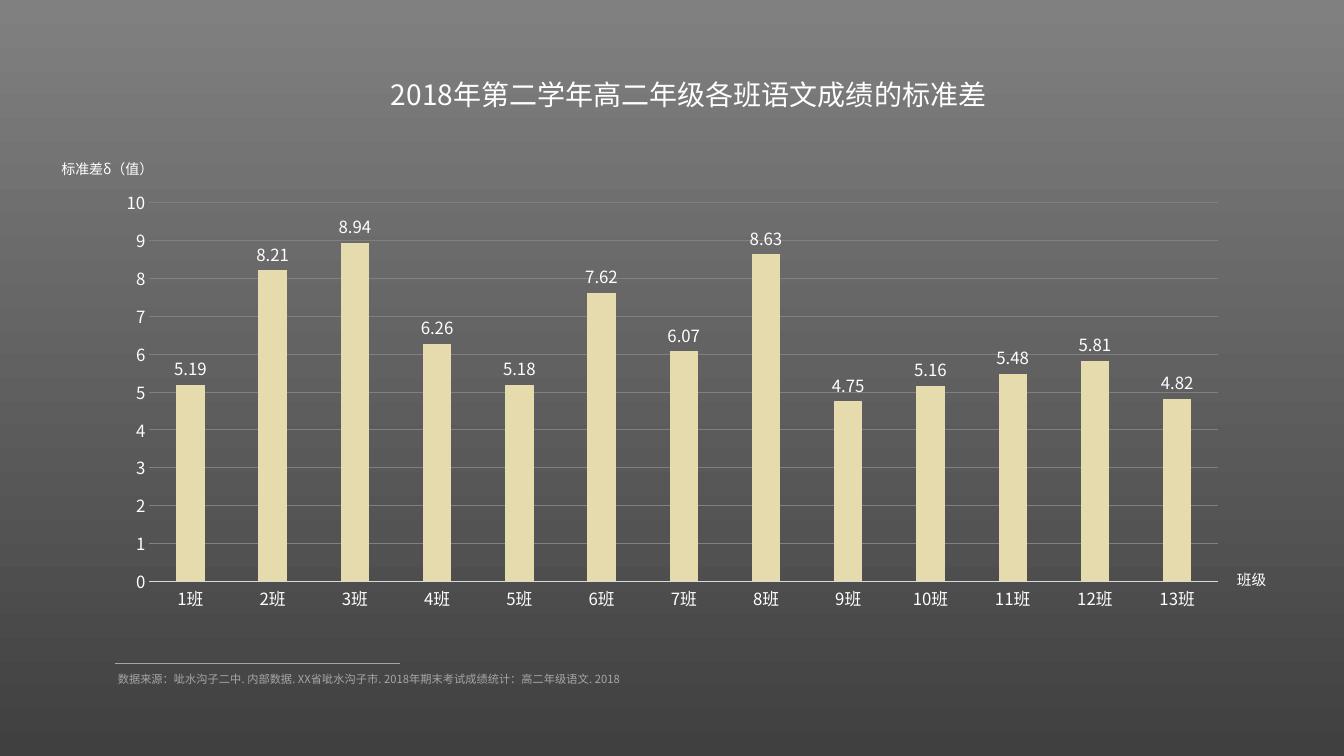
from lxml.etree import SubElement
from pptx import Presentation
from pptx.chart.data import CategoryChartData
from pptx.dml.color import RGBColor
from pptx.enum.chart import XL_CHART_TYPE, XL_LABEL_POSITION, XL_TICK_MARK
from pptx.enum.shapes import MSO_CONNECTOR
from pptx.oxml import parse_xml
from pptx.oxml.ns import nsdecls, qn
from pptx.util import Inches, Pt

FACE = "Noto Sans CJK SC"
SCORES = [5.19, 8.21, 8.94, 6.26, 5.18, 7.62, 6.07, 8.63, 4.75, 5.16, 5.48, 5.81, 4.82]
TEXTS = [
    ("2018年第二学年高二年级各班语文成绩的标准差", (3.78, 0.72, 6.13, 0.44), 20, "FFFFFF"),
    ("班级", (12.17, 5.61, 0.5, 0.28), 10.5, "FFFFFF"),
    ("标准差δ（值）", (0.51, 1.54, 1.12, 0.27), 10, "FFFFFF"),
    ("数据来源：呲水沟子二中. 内部数据. XX省呲水沟子市. "
     "2018年期末考试成绩统计：高二年级语文. 2018", (1.07, 6.62, 8.08, 0.24), 8, "A6A6A6"),
]


def tint(code):
    """Turn a hex string into a colour."""
    return RGBColor.from_string(code)


def style(font, size, code):
    """Set the face, size and colour of a font."""
    font.name = FACE
    font.size = Pt(size)
    font.color.rgb = tint(code)


def shade(slide, top, base):
    """Fill the background with a vertical gradient."""
    fill = slide.background.fill
    fill.gradient()
    fill.gradient_angle = 270
    for stop, code in zip(fill.gradient_stops, (top, base)):
        stop.color.rgb = tint(code)


def add_text(slide, text, place, size, code):
    """Add one line of label text in a box."""
    box = slide.shapes.add_textbox(*map(Inches, place))
    frame = box.text_frame
    frame.word_wrap = True
    frame.text = text
    run = frame.paragraphs[0].runs[0]
    style(run.font, size, code)
    SubElement(run.font._element, qn("a:ea"), typeface=FACE)


def add_rule(slide, left, right, level):
    """Add the thin rule above the source note."""
    ends = map(Inches, (left, level, right, level))
    rule = slide.shapes.add_connector(MSO_CONNECTOR.STRAIGHT, *ends)
    rule.line.color.rgb = tint("A5A5A5")
    rule.line.width = Pt(0.5)
    SubElement(rule._element.spPr, qn("a:effectLst"))


def set_plot(chart, left, top, width, height):
    """Fix the inner plot area as fractions of the chart."""
    area = chart._chartSpace.chart.plotArea
    for old in area.findall(qn("c:layout")):
        area.remove(old)
    parts = zip("xywh", (left, top, width, height))
    sizes = "".join(f'<c:{key} val="{part}"/>' for key, part in parts)
    area.insert(0, parse_xml(
        f'<c:layout {nsdecls("c")}><c:manualLayout><c:layoutTarget val="inner"/>'
        '<c:xMode val="edge"/><c:yMode val="edge"/>'
        f'{sizes}</c:manualLayout></c:layout>'))


def set_axes(chart):
    """Format both axes and the grid."""
    base, scale = chart.category_axis, chart.value_axis
    for axis in (base, scale):
        axis.major_tick_mark = axis.minor_tick_mark = XL_TICK_MARK.NONE
        style(axis.tick_labels.font, 12, "FFFFFF")
    base.format.line.color.rgb = tint("D9D9D9")
    base.format.line.width = Pt(0.75)
    scale.format.line.fill.background()
    scale.minimum_scale, scale.maximum_scale, scale.major_unit = 0, 10, 1
    grid = scale.major_gridlines.format.line
    grid.color.rgb = tint("808080")
    grid.width = Pt(0.25)


def add_bars(slide, place):
    """Add the column chart of each class."""
    data = CategoryChartData()
    data.categories = [f"{n}班" for n in range(1, len(SCORES) + 1)]
    data.add_series("Series 1", SCORES)
    frame = slide.shapes.add_chart(
        XL_CHART_TYPE.COLUMN_CLUSTERED, *map(Inches, place), data)
    chart = frame.chart
    chart.has_legend = chart.has_title = False
    style(chart.font, 10, "000000")
    set_axes(chart)
    set_plot(chart, 0.04, 0.05, 0.94, 0.86)
    plot = chart.plots[0]
    plot.gap_width, plot.overlap = 190, -9
    plot.vary_by_categories = False
    bars = plot.series[0]
    bars.format.fill.solid()
    bars.format.fill.fore_color.rgb = tint("E6DBAD")
    labels = bars.data_labels
    labels.show_value = True
    labels.position = XL_LABEL_POSITION.OUTSIDE_END
    style(labels.font, 12, "FFFFFF")


def main():
    """Build the slide and save it."""
    deck = Presentation()
    deck.slide_width, deck.slide_height = Inches(13.33), Inches(7.5)
    slide = deck.slides.add_slide(deck.slide_layouts[6])
    shade(slide, "808080", "404040")
    add_bars(slide, (1.03, 1.79, 11.28, 4.37))
    for item in TEXTS:
        add_text(slide, *item)
    add_rule(slide, 1.14, 3.97, 6.58)
    deck.save("out.pptx")


if __name__ == "__main__":
    main()
